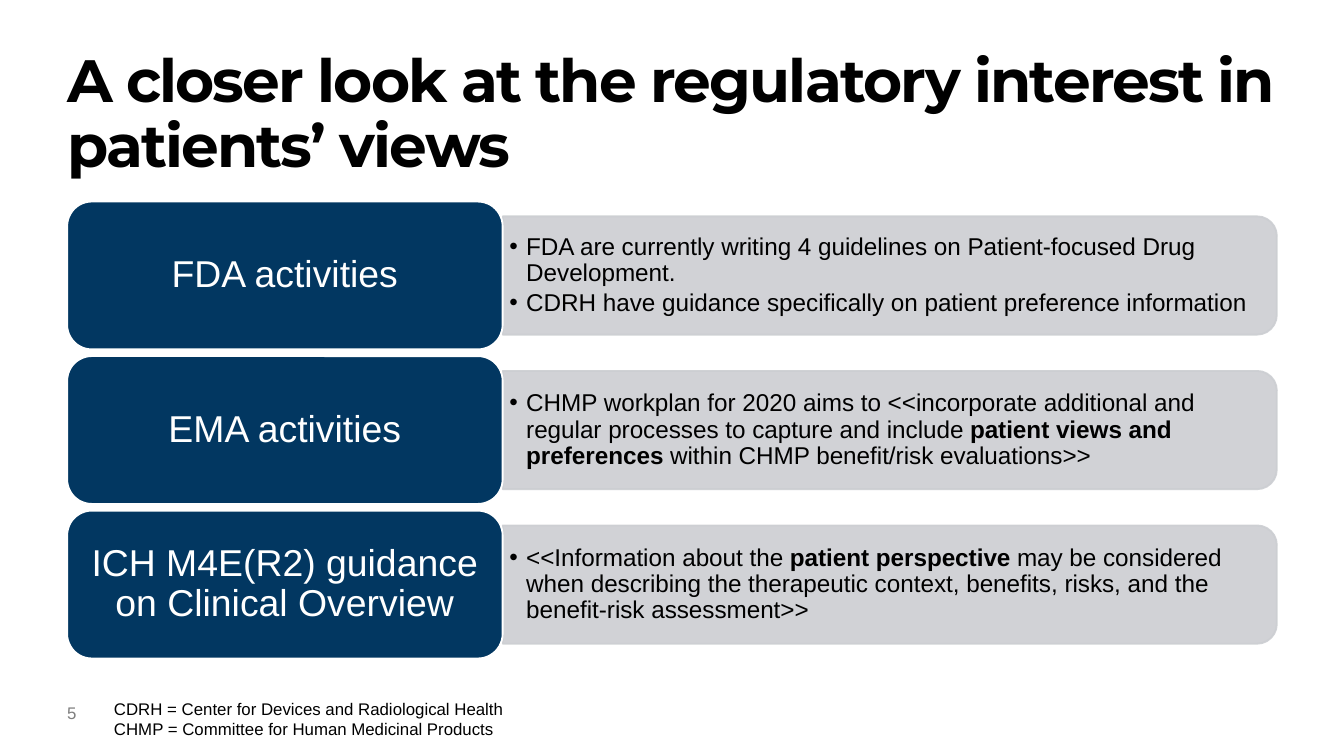
from lxml import etree
from pptx import Presentation
from pptx.dml.color import RGBColor
from pptx.enum.shapes import MSO_SHAPE
from pptx.enum.text import MSO_ANCHOR, MSO_AUTO_SIZE, PP_ALIGN
from pptx.oxml.ns import qn
from pptx.util import Inches, Pt

BLACK = RGBColor(0x00, 0x00, 0x00)
WHITE = RGBColor(0xFF, 0xFF, 0xFF)
NAVY = RGBColor(0x02, 0x37, 0x61)
SILVER = RGBColor(0xCC, 0xCE, 0xD2)
GRAY = RGBColor(0x7F, 0x7F, 0x7F)

TITLE = "A closer look at the regulatory interest in patients’ views"
# Each row: label, then bullets made of (text, bold) pieces
ROWS = [
    ("FDA activities", [
        [("FDA are currently writing 4 guidelines on Patient-focused Drug Development.", False)],
        [("CDRH have guidance specifically on patient preference information", False)],
    ]),
    ("EMA activities", [
        [("CHMP workplan for 2020 aims to <<incorporate additional and regular "
          "processes to capture and include ", False),
         ("patient views and preferences ", True),
         ("within CHMP benefit/risk evaluations>>", False)],
    ]),
    ("ICH M4E(R2) guidance on Clinical Overview", [
        [("<<Information about the ", False),
         ("patient perspective ", True),
         ("may be considered when describing the therapeutic context, benefits, "
          "risks, and the benefit-risk assessment>>", False)],
    ]),
]
ABBREVIATIONS = [
    "CDRH = Center for Devices and Radiological Health",
    "CHMP = Committee for Human Medicinal Products",
]


def set_font(font, size, color, name="Arial"):
    font.name = name
    font.size = Pt(size)
    font.color.rgb = color


def set_frame(frame, horizontal, vertical, anchor=MSO_ANCHOR.TOP):
    frame.word_wrap = True
    frame.auto_size = MSO_AUTO_SIZE.NONE
    frame.vertical_anchor = anchor
    frame.margin_left = frame.margin_right = Inches(horizontal)
    frame.margin_top = frame.margin_bottom = Inches(vertical)


def set_opacity(properties, percent):
    for color in properties.iter(qn("a:srgbClr")):
        etree.SubElement(color, qn("a:alpha")).set("val", str(percent * 1000))


def add_bullet(paragraph):
    properties = paragraph._p.get_or_add_pPr()
    properties.set("marL", str(Pt(9)))
    properties.set("indent", str(-Pt(9)))
    etree.SubElement(properties, qn("a:buFont")).set("typeface", "Arial")
    etree.SubElement(properties, qn("a:buChar")).set("char", "•")


def add_title(slide, left, top, width, height):
    title = slide.shapes.title
    title.left, title.top = Inches(left), Inches(top)
    title.width, title.height = Inches(width), Inches(height)
    set_frame(title.text_frame, 0, 0)
    paragraph = title.text_frame.paragraphs[0]
    paragraph.alignment = PP_ALIGN.LEFT
    paragraph.line_spacing = 0.9
    run = paragraph.add_run()
    run.text = TITLE
    set_font(run.font, 32, BLACK, "Montserrat")
    run.font.bold = True
    run._r.get_or_add_rPr().set("spc", "-100")


def add_row(slide, label, bullets, left, top, width, height):
    label_width = 0.36 * width
    bar_left, bar_width = left + label_width, width - label_width
    bar_height = 0.8 * height
    center_x, center_y = bar_left + bar_width / 2, top + height / 2

    # Bar, turned so that its rounded end faces right
    bar = slide.shapes.add_shape(
        MSO_SHAPE.ROUND_2_SAME_RECTANGLE,
        Inches(center_x - bar_height / 2), Inches(center_y - bar_width / 2),
        Inches(bar_height), Inches(bar_width))
    bar.rotation = 90
    bar.shadow.inherit = False
    bar.fill.solid()
    bar.fill.fore_color.rgb = SILVER
    bar.line.color.rgb = SILVER
    bar.line.width = Pt(1)
    set_opacity(bar._element.spPr, 90)

    # Bullets over the bar
    text_height = bar_height - 0.09
    box = slide.shapes.add_textbox(
        Inches(bar_left), Inches(center_y - text_height / 2),
        Inches(bar_width - 0.04), Inches(text_height))
    frame = box.text_frame
    set_frame(frame, 0.05, 0.03, MSO_ANCHOR.MIDDLE)
    for index, pieces in enumerate(bullets):
        paragraph = frame.add_paragraph() if index else frame.paragraphs[0]
        add_bullet(paragraph)
        paragraph.line_spacing = 0.9
        paragraph.space_after = Pt(2)
        for text, bold in pieces:
            run = paragraph.add_run()
            run.text = text
            set_font(run.font, 13, BLACK)
            run.font.bold = bold

    # Label
    shape = slide.shapes.add_shape(
        MSO_SHAPE.ROUNDED_RECTANGLE,
        Inches(left), Inches(top), Inches(label_width), Inches(height))
    shape.shadow.inherit = False
    shape.fill.solid()
    shape.fill.fore_color.rgb = NAVY
    shape.line.color.rgb = WHITE
    shape.line.width = Pt(1)
    # The rounded shape already insets its text by about 0.05
    set_frame(shape.text_frame, 0.08, 0.04, MSO_ANCHOR.MIDDLE)
    paragraph = shape.text_frame.paragraphs[0]
    paragraph.text = label
    paragraph.alignment = PP_ALIGN.CENTER
    paragraph.line_spacing = 0.9
    set_font(paragraph.font, 20, WHITE)


def add_rows(slide, left, top, width, height, gap=0.05):
    row_height = (height - gap * (len(ROWS) - 1)) / len(ROWS)
    for index, (label, bullets) in enumerate(ROWS):
        row_top = top + index * (row_height + gap)
        add_row(slide, label, bullets, left, row_top, width, row_height)


def add_footer(slide, left, top, width, height):
    # Slide number
    number = slide.shapes.add_textbox(
        Inches(left), Inches(top + 0.08), Inches(0.25), Inches(0.25))
    set_frame(number.text_frame, 0, 0)
    paragraph = number.text_frame.paragraphs[0]
    paragraph.text = "5"
    set_font(paragraph.font, 9, GRAY)

    # Abbreviations
    abbreviations = slide.shapes.add_textbox(
        Inches(left + 0.25), Inches(top), Inches(width - 0.25), Inches(height))
    frame = abbreviations.text_frame
    set_frame(frame, 0.1, 0.05)
    for index, text in enumerate(ABBREVIATIONS):
        paragraph = frame.add_paragraph() if index else frame.paragraphs[0]
        paragraph.text = text
        set_font(paragraph.font, 9, BLACK)


def main():
    presentation = Presentation()
    presentation.slide_width = Inches(10)
    presentation.slide_height = Inches(10 * 9 / 16)
    slide = presentation.slides.add_slide(presentation.slide_layouts[5])
    add_title(slide, 0.5, 0.38, 9, 1.05)
    add_rows(slide, 0.5, 1.5, 9, 3.4)
    add_footer(slide, 0.5, 5.15, 4.82, 0.4)
    presentation.save("out.pptx")


if __name__ == "__main__":
    main()
